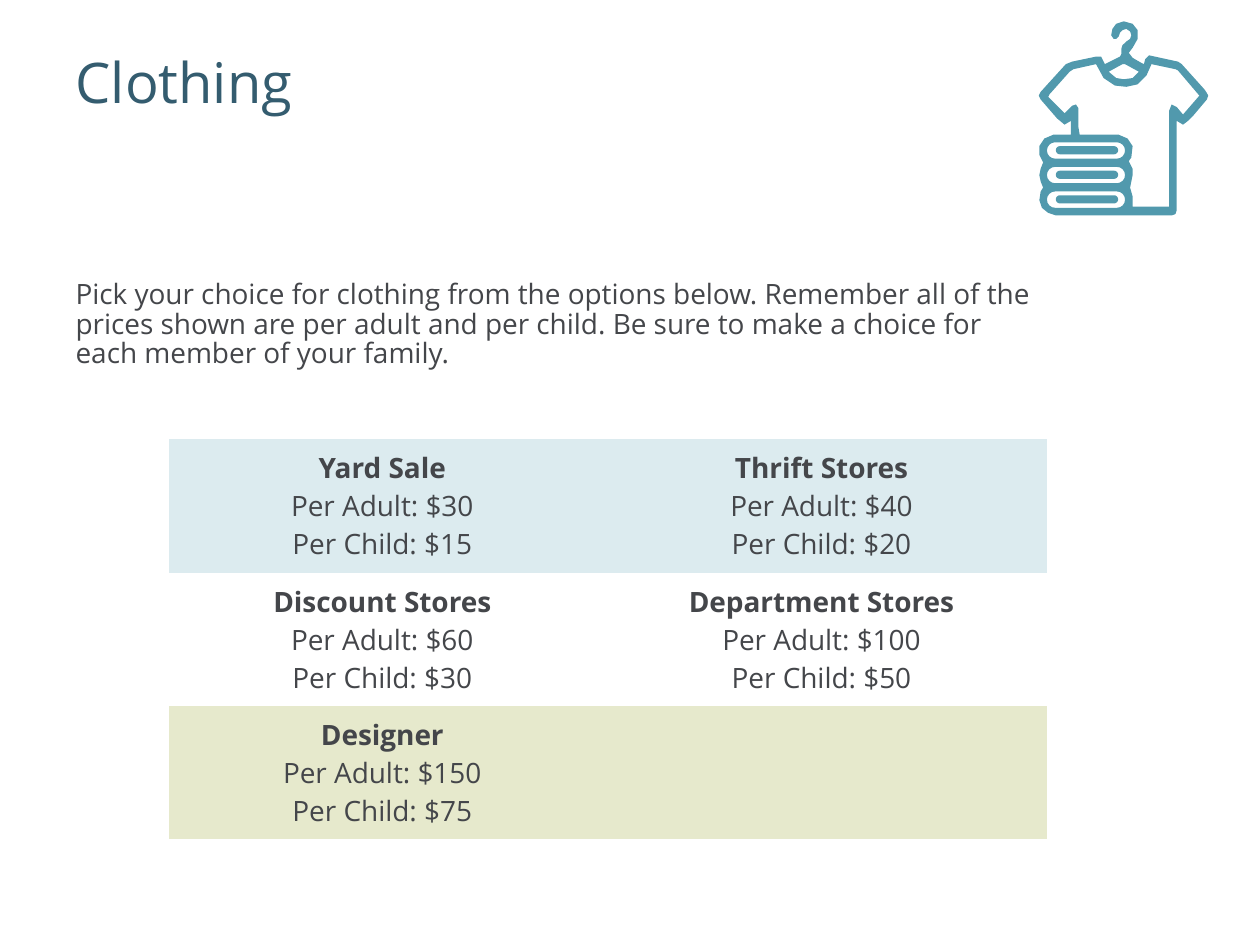
import math

import pptx
import pptx.dml.color
import pptx.enum.text
import pptx.util

Pt = pptx.util.Pt
RGBColor = pptx.dml.color.RGBColor

NAVY = RGBColor(0x34, 0x5C, 0x6F)
CHARCOAL = RGBColor(0x44, 0x46, 0x4A)
TEAL = RGBColor(0x51, 0x99, 0xAD)
PALE_BLUE = RGBColor(0xDC, 0xEB, 0xEF)
WHITE = RGBColor(0xFF, 0xFF, 0xFF)
PALE_GREEN = RGBColor(0xE6, 0xE9, 0xCC)
FONT = "Open Sans"
NO_TABLE_STYLE = "{2D5ABB26-0587-4C30-8999-92F81FD0307C}"

INSTRUCTIONS = (
    "Pick your choice for clothing from the options below. Remember all of the "
    "prices shown are per adult and per child. Be sure to make a choice for "
    "each member of your family."
)
PRICE_ROWS = [
    (PALE_BLUE, [("Yard Sale", 30, 15), ("Thrift Stores", 40, 20)]),
    (WHITE, [("Discount Stores", 60, 30), ("Department Stores", 100, 50)]),
    (PALE_GREEN, [("Designer", 150, 75)]),
]

ICON_UNIT = 0.72
SHIRT_EDGE = [
    (112, 80), (112, 151), (111, 154), (108, 155), (16, 155), (10, 153),
    (5, 149), (3, 143), (4, 136), (6, 133), (4, 128), (3, 123), (4, 118),
    (6, 113), (3, 107), (3, 100), (7, 94), (14, 91), (28, 91), (28, 80),
    (23, 83), (17, 78), (4, 63), (2.5, 60), (4, 57), (24, 35), (29, 33),
    (48, 29), (52, 29), (54, 33), (55, 35), (67, 29), (68, 27), (68, 23),
    (69, 20), (72, 17), (75, 15), (76, 12), (75, 9), (72, 7), (69, 8),
    (67, 10), (66, 13), (64, 15), (62, 15), (60, 12), (61, 7), (64, 3),
    (70, 1), (77, 3), (81, 8), (81, 15), (77, 22), (74, 26), (77, 30),
    (84, 34), (86, 35), (87, 31), (90, 28), (113, 33), (116, 35), (134, 55),
    (136, 58), (137, 60), (136, 63), (125, 76), (121, 80), (117, 83),
]
SHIRT_INSIDE = [
    (130, 60), (113, 40), (111, 39), (92, 35), (88, 44), (81, 51), (72, 53),
    (63, 52), (54, 46), (48, 35), (30, 39), (27, 41), (11, 59), (10, 61),
    (23, 74), (29, 68), (32, 67), (34, 70), (34, 85), (35, 91), (66, 91),
    (73, 94), (77, 100), (76, 109), (74, 112), (77, 118), (77, 123),
    (75, 133), (77, 140), (77, 148), (106, 148), (106, 72), (108, 67),
    (112, 69), (117, 75),
]
COLLAR_GAP = [(82, 41), (71, 35), (69, 35), (58, 41), (64, 46), (70, 47), (77, 46)]


def add_run(paragraph, text, size, color, bold=False):
    """Add one styled run to a paragraph."""
    run = paragraph.add_run()
    run.text = text
    run.font.name = FONT
    run.font.size = Pt(size)
    run.font.bold = bold
    run.font.color.rgb = color


def add_text(slide, box, text, size, color, line_spacing):
    """Place a wrapped paragraph without margins in the box."""
    frame = slide.shapes.add_textbox(*map(Pt, box)).text_frame
    frame.word_wrap = True
    frame.margin_left = frame.margin_right = 0
    frame.margin_top = frame.margin_bottom = 0
    paragraph = frame.paragraphs[0]
    paragraph.line_spacing = line_spacing
    add_run(paragraph, text, size, color)


def fill_price_cell(cell, store, adult, child):
    """Write a store name and its two prices, centred in the cell."""
    lines = [store, f"Per Adult: ${adult}", f"Per Child: ${child}"]
    for index, line in enumerate(lines):
        frame = cell.text_frame
        paragraph = frame.add_paragraph() if index else frame.paragraphs[0]
        paragraph.alignment = pptx.enum.text.PP_ALIGN.CENTER
        add_run(paragraph, line, 16, CHARCOAL, bold=index == 0)


def add_price_table(slide, box):
    """Place the table of stores, one fill to each row."""
    left, top, width, height = box
    frame = slide.shapes.add_table(len(PRICE_ROWS), 2, *map(Pt, box))
    prices = frame.table
    prices._tbl.tblPr.find(pptx.oxml.ns.qn("a:tableStyleId")).text = NO_TABLE_STYLE
    prices.first_row = prices.horz_banding = False
    prices.columns[0].width = Pt(244)
    prices.columns[1].width = Pt(width - 244)
    for row, (color, stores) in enumerate(PRICE_ROWS):
        prices.rows[row].height = Pt(height / len(PRICE_ROWS))
        for column in range(2):
            cell = prices.cell(row, column)
            cell.fill.solid()
            cell.fill.fore_color.rgb = color
            cell.vertical_anchor = pptx.enum.text.MSO_ANCHOR.MIDDLE
            if column < len(stores):
                fill_price_cell(cell, *stores[column])


def capsule(left, top, width, height):
    """Return the outline of a bar with round ends."""
    radius = height / 2
    points = []
    for center, start in ((left + width - radius, -90), (left + radius, 90)):
        for step in range(9):
            angle = math.radians(start + 22.5 * step)
            points.append((center + radius * math.cos(angle),
                           top + radius + radius * math.sin(angle)))
    return points


def add_outline(shapes, left, top, contours):
    """Draw contours as one teal shape; inner contours are holes."""
    scaled = [[(Pt(x * ICON_UNIT), Pt(y * ICON_UNIT)) for x, y in contour]
              for contour in contours]
    builder = shapes.build_freeform(*scaled[0][0])
    for index, contour in enumerate(scaled):
        if index:
            builder.move_to(*contour[0])
        builder.add_line_segments(contour[1:], close=True)
    outline = builder.convert_to_shape(Pt(left), Pt(top))
    outline.shadow.inherit = False
    outline.fill.solid()
    outline.fill.fore_color.rgb = TEAL
    outline.line.fill.background()


def add_clothing_icon(slide, left, top):
    """Draw a shirt on a hanger beside three folded garments."""
    shapes = slide.shapes.add_group_shape().shapes
    fold_tops = [97 + 19.5 * index for index in range(3)]
    folds = [capsule(9, fold_top, 62, 13) for fold_top in fold_tops]
    add_outline(shapes, left, top, [SHIRT_EDGE, SHIRT_INSIDE, COLLAR_GAP, *folds])
    for fold_top in fold_tops:
        add_outline(shapes, left, top, [capsule(16, fold_top + 3, 49.5, 6.5)])


def main():
    """Build and save the clothing slide."""
    deck = pptx.Presentation()
    deck.slide_width, deck.slide_height = Pt(720), Pt(540)
    slide = deck.slides.add_slide(deck.slide_layouts[6])
    add_text(slide, (43.2, 25.2, 648, 90), "Clothing", 32, NAVY, 1.05)
    add_text(slide, (43.2, 160.6, 555.8, 72.7), INSTRUCTIONS, 16, CHARCOAL, 0.88)
    add_price_table(slide, (96.5, 251, 502, 228.6))
    add_clothing_icon(slide, 591.8, 11.5)
    deck.save("out.pptx")


if __name__ == "__main__":
    main()
